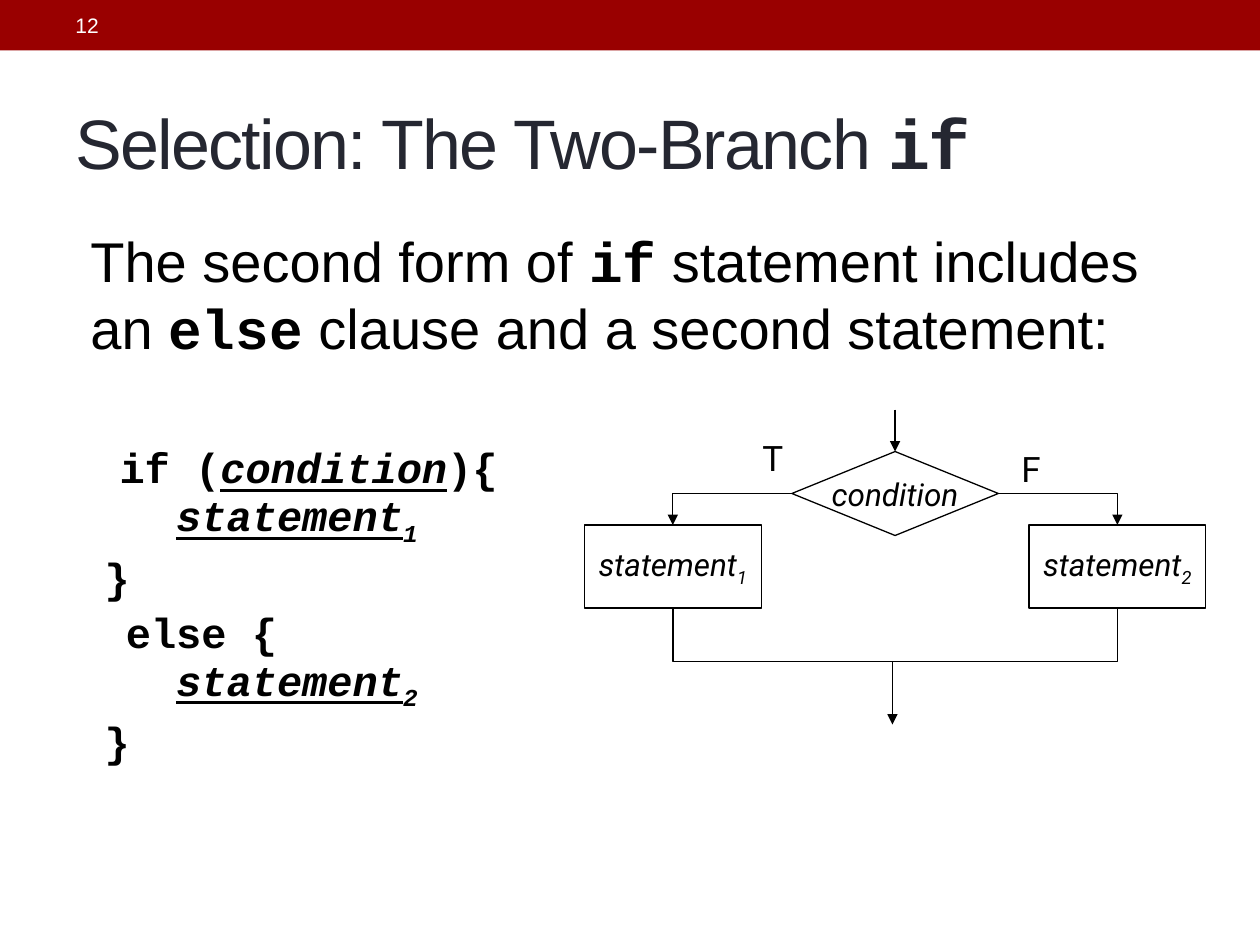
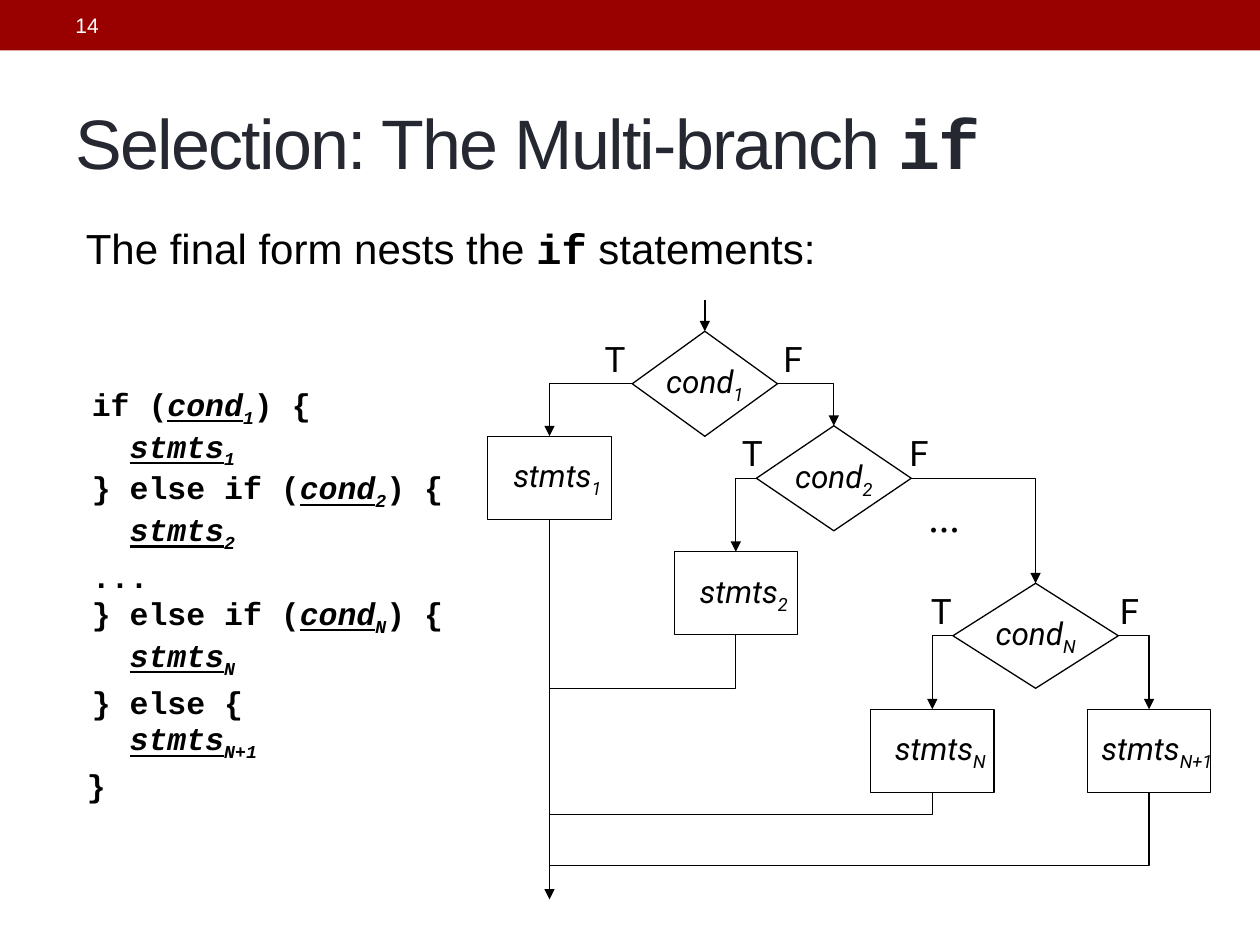
from dataclasses import dataclass

from lxml import etree
from pptx import Presentation
from pptx.dml.color import RGBColor
from pptx.enum.shapes import MSO_CONNECTOR, MSO_SHAPE
from pptx.enum.text import MSO_ANCHOR, MSO_AUTO_SIZE, PP_ALIGN
from pptx.oxml.ns import qn
from pptx.util import Pt

RECT, DIAMOND = MSO_SHAPE.RECTANGLE, MSO_SHAPE.DIAMOND
LINE, ELBOW = MSO_CONNECTOR.STRAIGHT, MSO_CONNECTOR.ELBOW
HIGH, MIDDLE = MSO_ANCHOR.TOP, MSO_ANCHOR.MIDDLE
LEFT_TEXT, CENTER = PP_ALIGN.LEFT, PP_ALIGN.CENTER
TOP, LEFT, BOTTOM, RIGHT = range(4)
DOWN_FIRST, ACROSS_FIRST = 0, 100000  # place of an elbow's bend


@dataclass(frozen=True)
class Theme:
    band: RGBColor = RGBColor(0x99, 0x00, 0x00)
    title: RGBColor = RGBColor(0x25, 0x27, 0x31)
    ink: RGBColor = RGBColor(0x00, 0x00, 0x00)
    paper: RGBColor = RGBColor(0xFF, 0xFF, 0xFF)
    sans: str = "Arial"
    code: str = "Courier New"
    chart: str = "Roboto"
    serif: str = "Times New Roman"
    head_size: float = 40
    num_size: float = 12
    node_size: float = 18
    mark_size: float = 20
    dots_size: float = 24
    rule: float = 0.75


THEME = Theme()


# Text
def write(par, text, font=THEME.sans, size=18, color=THEME.ink, bold=False,
          italic=False, under=False, base=0, track=0):
    run = par.add_run()
    run.text = text
    face = run.font
    face.name, face.size, face.color.rgb = font, Pt(size), color
    face.bold, face.italic, face.underline = bold, italic, under
    props = run._r.get_or_add_rPr()
    if base:
        props.set("baseline", str(base * 1000))
    if track:
        props.set("spc", str(track * 100))


def term(par, name, sub, under=False, **look):
    """An italic name with an optional subscript."""
    write(par, name, italic=True, under=under, **look)
    if sub:
        write(par, sub, italic=True, base=-25, **look)


def mixed(par, parts, **look):
    """Plain text in which every second part is a keyword."""
    for i, part in enumerate(parts):
        word = i % 2 == 1
        write(par, part, font=THEME.code if word else THEME.sans, bold=word, **look)


def area(slide, left, top, wide, high, wrap=True, anchor=HIGH):
    frame = slide.shapes.add_textbox(Pt(left), Pt(top), Pt(wide), Pt(high)).text_frame
    frame.word_wrap, frame.vertical_anchor = wrap, anchor
    return frame


def lead(slide, left, top, wide, high, size, parts):
    par = area(slide, left, top, wide, high).paragraphs[0]
    par.space_before = Pt(size / 8)
    mixed(par, parts, size=size)


def listing(slide, left, top, wide, high, size, pitch, lines):
    """Code lines, each an indent and parts; a pair is a name and subscript."""
    frame = area(slide, left, top, wide, high)
    look = dict(font=THEME.code, size=size, bold=True)
    for i, (indent, *parts) in enumerate(lines):
        par = frame.add_paragraph() if i else frame.paragraphs[0]
        par.line_spacing = Pt(pitch)
        par._p.get_or_add_pPr().set("marL", str(Pt(indent)))
        for part in parts:
            if isinstance(part, tuple):
                term(par, *part, under=True, **look)
            else:
                write(par, part, **look)


# Slide frame
def start(deck, number, parts):
    slide = deck.slides.add_slide(deck.slide_layouts[5])
    band = slide.shapes.add_shape(RECT, 0, 0, deck.slide_width, Pt(28.8))
    band.shadow.inherit = False
    band.fill.solid()
    band.fill.fore_color.rgb = THEME.band
    band.line.fill.background()
    frame = area(slide, 36, 1.5, 228, 26, anchor=MIDDLE)
    write(frame.paragraphs[0], number, size=THEME.num_size, color=THEME.paper)

    title = slide.shapes.title
    title.left, title.top, title.width, title.height = Pt(36), Pt(42), Pt(648), Pt(78)
    frame = title.text_frame
    frame.auto_size, frame.vertical_anchor = MSO_AUTO_SIZE.NONE, MIDDLE
    frame.paragraphs[0].alignment = LEFT_TEXT
    mixed(frame.paragraphs[0], parts, size=THEME.head_size,
          color=THEME.title, track=-1)
    return slide


# Flowchart
def node(slide, kind, mid, top, wide, high, name, sub="", shift=0):
    """An outlined shape centred on mid, its text moved right by shift."""
    shape = slide.shapes.add_shape(kind, Pt(mid - wide / 2), Pt(top), Pt(wide), Pt(high))
    shape.shadow.inherit = False
    shape.fill.solid()
    shape.fill.fore_color.rgb = THEME.paper
    shape.line.color.rgb = THEME.ink
    shape.line.width = Pt(THEME.rule)
    frame = shape.text_frame
    frame.word_wrap, frame.vertical_anchor = False, MIDDLE
    frame.margin_left = Pt(2 * shift)
    frame.margin_right = frame.margin_top = frame.margin_bottom = 0
    par = frame.paragraphs[0]
    par.alignment, par.space_before = CENTER, Pt(2)
    term(par, name, sub, font=THEME.chart, size=THEME.node_size)
    return shape


def port(shape, side):
    mid, half = shape.left + shape.width // 2, shape.top + shape.height // 2
    return {TOP: (mid, shape.top), LEFT: (shape.left, half),
            BOTTOM: (mid, shape.top + shape.height),
            RIGHT: (shape.left + shape.width, half)}[side]


def link(slide, begin, end, bend=None, head=True):
    """A straight line, or an elbow when bend is given."""
    kind = LINE if bend is None else ELBOW
    wire = slide.shapes.add_connector(kind, *begin, *end)
    wire.line.color.rgb = THEME.ink
    wire.line.width = Pt(THEME.rule)
    props = wire._element.spPr
    if bend is not None:
        guides = props.find(qn("a:prstGeom")).get_or_add_avLst()
        etree.SubElement(guides, qn("a:gd"), name="adj1", fmla=f"val {bend}")
    if head:
        etree.SubElement(props.find(qn("a:ln")), qn("a:tailEnd"), type="triangle")
    etree.SubElement(props, qn("a:effectLst"))
    return wire


def enter(slide, test, drop):
    x, y = port(test, TOP)
    link(slide, (x, y - Pt(drop)), (x, y)).end_connect(test, TOP)


def branch(slide, test, goal):
    side = LEFT if goal.left < test.left else RIGHT
    link(slide, port(test, side), port(goal, TOP), ACROSS_FIRST)


def merge(slide, box, x, y):
    link(slide, port(box, BOTTOM), (Pt(x), Pt(y)), DOWN_FIRST, head=False)


def mark(slide, text, left, top):
    par = area(slide, left, top, 26, 31, wrap=False, anchor=MIDDLE).paragraphs[0]
    par.space_before = Pt(4.6)
    write(par, text, font=THEME.chart, size=THEME.mark_size)


# Slides
def two_way(deck):
    slide = start(deck, "12", ["Selection: The Two-Branch ", "if"])
    listing(slide, 36, 246.5, 326, 201.5, 24, 31.3, [
        (25.2, "if (", ("condition", ""), "){"),
        (57.6, ("statement", "1")),
        (16.7, "}"),
        (28.8, "else {"),
        (57.6, ("statement", "2")),
        (16.7, "}"),
    ])
    test = node(slide, DIAMOND, 511.5, 258, 118, 48, "condition")
    enter(slide, test, 24)
    for mid, sub in (384.5, "1"), (638.5, "2"):
        box = node(slide, RECT, mid, 300, 101, 47.5, "statement", sub)
        branch(slide, test, box)
        merge(slide, box, 510, 378)
    link(slide, (Pt(510), Pt(378)), (Pt(510), Pt(414)))
    mark(slide, "T", 428.5, 246)
    mark(slide, "F", 576.5, 252)
    lead(slide, 44.6, 126, 639.4, 126, 32,
         ["The second form of ", "if", " statement includes an ", "else",
          " clause and a second statement:"])


def many_way(deck):
    slide = start(deck, "14", ["Selection: The Multi-branch ", "if"])
    lead(slide, 42, 123.8, 648, 50, 24,
         ["The final form nests the ", "if", " statements:"])
    outer, inner = 21.6, 43.2
    listing(slide, 23.8, 217, 258, 247, 18, 23.9, [
        (outer, "if (", ("cond", "1"), ") {"),
        (inner, ("stmts", "1")),
        (outer, "} else if (", ("cond", "2"), ") {"),
        (inner, ("stmts", "2")),
        (outer, "..."),
        (outer, "} else if (", ("cond", "N"), ") {"),
        (inner, ("stmts", "N")),
        (outer, "} else {"),
        (inner, ("stmts", "N+1")),
        (18.8, "}"),
    ])

    # Tests: subscript, middle, top, width, and left of the T and F marks
    tests = []
    for sub, mid, top, wide, yes, no in (
            ("1", 402.8, 189.3, 83, 338.4, 440.6),
            ("2", 476.5, 243.3, 88.5, 416.9, 512.6),
            ("N", 591.8, 333.3, 94.5, 524.9, 632.9)):
        tests.append(node(slide, DIAMOND, mid, top, wide, 60, "cond", sub))
        mark(slide, "T", yes, top)
        mark(slide, "F", no, top)
    boxes = [node(slide, RECT, mid, top, 70.5, 47.5, "stmts", sub, shift=4.5)
             for sub, mid, top in (("1", 314, 249.3), ("2", 420.5, 315.3),
                                   ("N", 532.8, 405.3), ("N+1", 656.6, 405.3))]

    enter(slide, tests[0], 18)
    for test, box in zip(tests, boxes):
        branch(slide, test, box)
    for test, goal in zip(tests, tests[1:] + boxes[-1:]):
        branch(slide, test, goal)

    # All paths run into the line below the first box
    trunk = link(slide, port(boxes[0], BOTTOM), (Pt(314), Pt(514)))
    trunk.begin_connect(boxes[0], BOTTOM)
    for box, y in zip(boxes[1:], (393.3, 465.3, 494.6)):
        merge(slide, box, 314, y)
    dots = area(slide, 523.4, 276.5, 32.4, 36, wrap=False)
    write(dots.paragraphs[0], "...", font=THEME.serif, size=THEME.dots_size)


def main():
    deck = Presentation()
    deck.slide_width, deck.slide_height = Pt(720), Pt(540)
    two_way(deck)
    many_way(deck)
    deck.save("out.pptx")


if __name__ == "__main__":
    main()
